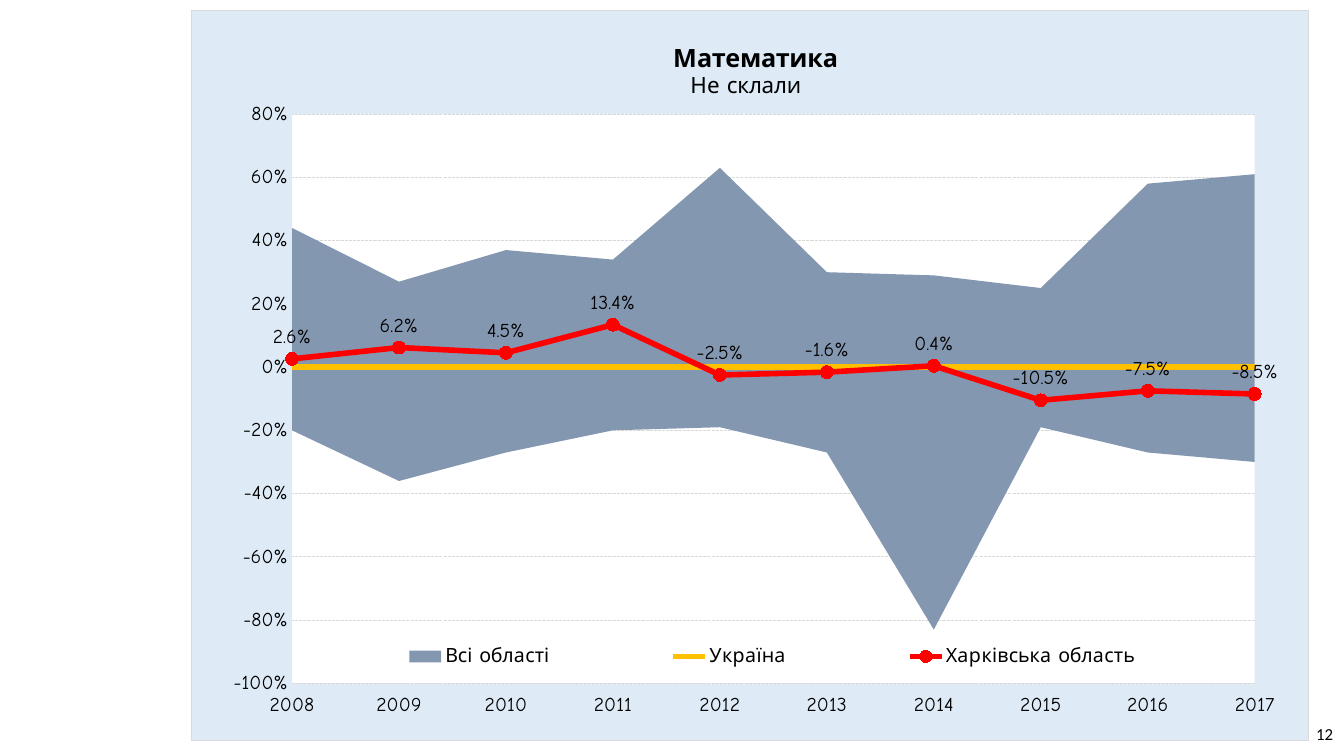
import pptx
import pptx.chart.data
import pptx.dml.color
import pptx.enum.chart
import pptx.enum.dml
import pptx.enum.text
import pptx.oxml
import pptx.oxml.ns
import pptx.util

SLIDE_WIDTH, SLIDE_HEIGHT = 1344, 756
EMU_PER_PX = 12192000 / SLIDE_WIDTH
CHART_FONT, NUMBER_FONT = "Comic Neue", "Calibri"
COLORS = {
    "text": "000000",
    "panel": "DEEBF7",
    "plot": "FFFFFF",
    "grid": "D9D9D9",
    "range": "8497B0",
    "country": "FFC000",
    "region": "FF0000",
}

YEARS = [str(year) for year in range(2008, 2018)]
HIGHEST = [0.44, 0.27, 0.37, 0.34, 0.63, 0.3, 0.29, 0.25, 0.58, 0.61]
LOWEST = [-0.2, -0.36, -0.27, -0.2, -0.19, -0.27, -0.83, -0.19, -0.27, -0.3]
KHARKIV = [0.026, 0.062, 0.045, 0.134, -0.025, -0.016, 0.004, -0.105, -0.075, -0.085]
SERIES = [
    ("Всі області", HIGHEST),
    ("Series 2", LOWEST),
    ("Україна", [0] * len(YEARS)),
    ("Харківська область", KHARKIV),
]
AREA_COUNT = 2


def px(length):
    return pptx.util.Emu(round(length * EMU_PER_PX))


def rgb(name):
    return pptx.dml.color.RGBColor.from_string(COLORS[name])


def chart_xml(tag, content=""):
    namespaces = pptx.oxml.ns.nsdecls("c", "a")
    return pptx.oxml.parse_xml(f"<c:{tag} {namespaces}>{content}</c:{tag}>")


def layout_xml(x, y, width=None, height=None, inner=False):
    content = '<c:layoutTarget val="inner"/>' if inner else ""
    content += '<c:xMode val="edge"/><c:yMode val="edge"/>'
    for tag, value in zip("xywh", (x, y, width, height)):
        if value is not None:
            content += f'<c:{tag} val="{value}"/>'
    return chart_xml("layout", f"<c:manualLayout>{content}</c:manualLayout>")


def fill_xml(fill, border=None):
    content = f'<a:solidFill><a:srgbClr val="{COLORS[fill]}"/></a:solidFill>'
    if border:
        content += (f'<a:ln w="9525"><a:solidFill><a:srgbClr val="{COLORS[border]}"/>'
                    "</a:solidFill></a:ln>")
    else:
        content += "<a:ln><a:noFill/></a:ln>"
    return chart_xml("spPr", content)


def place(element, layout, after):
    """Give a chart part its manual layout, right after the named child."""
    for old in element.xpath("c:layout"):
        element.remove(old)
    element.xpath(after)[-1].addnext(layout)


class SlideBuilder:
    def __init__(self, presentation):
        self.slide = presentation.slides.add_slide(presentation.slide_layouts[6])

    def style_font(self, font, size, name=CHART_FONT, bold=False):
        font.name, font.size, font.bold = name, pptx.util.Pt(size), bold
        font.color.rgb = rgb("text")

    def style_line(self, line, color, width):
        line.color.rgb = rgb(color)
        line.width = pptx.util.Pt(width)

    def add_text(self, text, left, top, width, height, size):
        box = self.slide.shapes.add_textbox(px(left), px(top), px(width), px(height))
        frame = box.text_frame
        frame.word_wrap = True
        frame.vertical_anchor = pptx.enum.text.MSO_ANCHOR.MIDDLE
        paragraph = frame.paragraphs[0]
        paragraph.text = text
        paragraph.alignment = pptx.enum.text.PP_ALIGN.RIGHT
        self.style_font(paragraph.font, size, NUMBER_FONT)

    def add_chart(self, left, top, width, height):
        data = pptx.chart.data.CategoryChartData()
        data.categories = YEARS
        for name, values in SERIES:
            data.add_series(name, values)
        chart = self.slide.shapes.add_chart(
            pptx.enum.chart.XL_CHART_TYPE.AREA,
            px(left), px(top), px(width), px(height), data).chart
        self.style_font(chart.font, 14)
        chart.plots[0].vary_by_categories = False
        return chart

    def move_to_lines(self, chart):
        """Turn every series after the areas into a line on the same axes."""
        area = chart.element.xpath(".//c:areaChart")[0]
        lines = chart_xml("lineChart", '<c:grouping val="standard"/><c:varyColors val="0"/>')
        for series in area.xpath("c:ser")[AREA_COUNT:]:
            for child in series.xpath("c:invertIfNegative"):
                series.remove(child)
            lines.append(series)
        lines.append(pptx.oxml.parse_xml(
            f'<c:marker {pptx.oxml.ns.nsdecls("c")} val="1"/>'))
        for axis in area.xpath("c:axId"):
            lines.append(pptx.oxml.parse_xml(
                f'<c:axId {pptx.oxml.ns.nsdecls("c")} val="{axis.get("val")}"/>'))
        area.addnext(lines)

    def style_series(self, chart):
        areas, lines = chart.plots
        for series in areas.series:
            series.format.fill.solid()
            series.format.fill.fore_color.rgb = rgb("range")
            series.format.line.fill.background()
        country, region = lines.series
        for series, color in ((country, "country"), (region, "region")):
            self.style_line(series.format.line, color, 4)
            series.smooth = False
        country.marker.style = pptx.enum.chart.XL_MARKER_STYLE.NONE

        marker = region.marker
        marker.style, marker.size = pptx.enum.chart.XL_MARKER_STYLE.CIRCLE, 9
        marker.format.fill.solid()
        marker.format.fill.fore_color.rgb = rgb("region")
        self.style_line(marker.format.line, "region", 0.75)

        labels = region.data_labels
        labels.show_value = True
        labels.number_format, labels.number_format_is_linked = "0.0%", False
        labels.position = pptx.enum.chart.XL_LABEL_POSITION.ABOVE
        self.style_font(labels.font, 14)

    def style_axes(self, chart):
        years, values = chart.category_axis, chart.value_axis
        for axis in (years, values):
            axis.major_tick_mark = axis.minor_tick_mark = pptx.enum.chart.XL_TICK_MARK.NONE
            self.style_font(axis.tick_labels.font, 14)
        years.tick_label_position = pptx.enum.chart.XL_TICK_LABEL_POSITION.LOW
        years.has_major_gridlines = False
        self.style_line(years.format.line, "grid", 1)

        values.minimum_scale, values.maximum_scale, values.major_unit = -1, 0.8, 0.2
        values.tick_labels.number_format = "0%"
        values.tick_labels.number_format_is_linked = False
        values.format.line.fill.background()
        values.has_major_gridlines = True
        grid = values.major_gridlines.format.line
        self.style_line(grid, "grid", 0.75)
        grid.dash_style = pptx.enum.dml.MSO_LINE.SQUARE_DOT
        chart.element.xpath(".//c:valAx/c:crossBetween")[0].set("val", "midCat")

    def set_title(self, owner, title, text, size, bold, x, y):
        owner.has_title = True
        paragraph = title().text_frame.paragraphs[0]
        run = paragraph.add_run()
        run.text = text
        self.style_font(paragraph.font, size, bold=bold)
        self.style_font(run.font, size, bold=bold)
        place(title().element if hasattr(title(), "element") else title()._element,
              layout_xml(x, y), "c:tx")

    def style_legend(self, chart):
        chart.has_legend = True
        legend = chart.legend
        legend.position = pptx.enum.chart.XL_LEGEND_POSITION.BOTTOM
        legend.include_in_layout = False
        self.style_font(legend.font, 14)
        element = chart.element.xpath(".//c:legend")[0]
        element.xpath("c:legendPos")[0].addnext(
            chart_xml("legendEntry", '<c:idx val="1"/><c:delete val="1"/>'))
        place(element, layout_xml(0.09, 0.86, 0.86, 0.05), "c:legendEntry")

    def style_background(self, chart):
        chart.element.xpath("c:chart")[0].addnext(fill_xml("panel", "grid"))
        plot_area = chart.element.xpath("c:chart/c:plotArea")[0]
        for old in plot_area.xpath("c:layout"):
            plot_area.remove(old)
        plot_area.insert(0, layout_xml(0.09, 0.142, 0.862, 0.78, inner=True))
        plot_area.append(fill_xml("plot"))


def main():
    presentation = pptx.Presentation()
    presentation.slide_width, presentation.slide_height = px(SLIDE_WIDTH), px(SLIDE_HEIGHT)
    builder = SlideBuilder(presentation)

    # Slide number
    builder.add_text("12", 1041, 714, 302, 40, 12)

    # Range of all regions with the country and Kharkiv lines
    chart = builder.add_chart(191, 10, 1118, 731)
    builder.move_to_lines(chart)
    builder.style_series(chart)
    builder.style_axes(chart)

    # Titles, legend and background
    builder.set_title(chart, lambda: chart.chart_title, "Математика", 18, True, 0.427, 0.036)
    years = chart.category_axis
    builder.set_title(years, lambda: years.axis_title, "Не склали", 16, False, 0.443, 0.077)
    builder.style_legend(chart)
    builder.style_background(chart)

    presentation.save("out.pptx")


if __name__ == "__main__":
    main()
